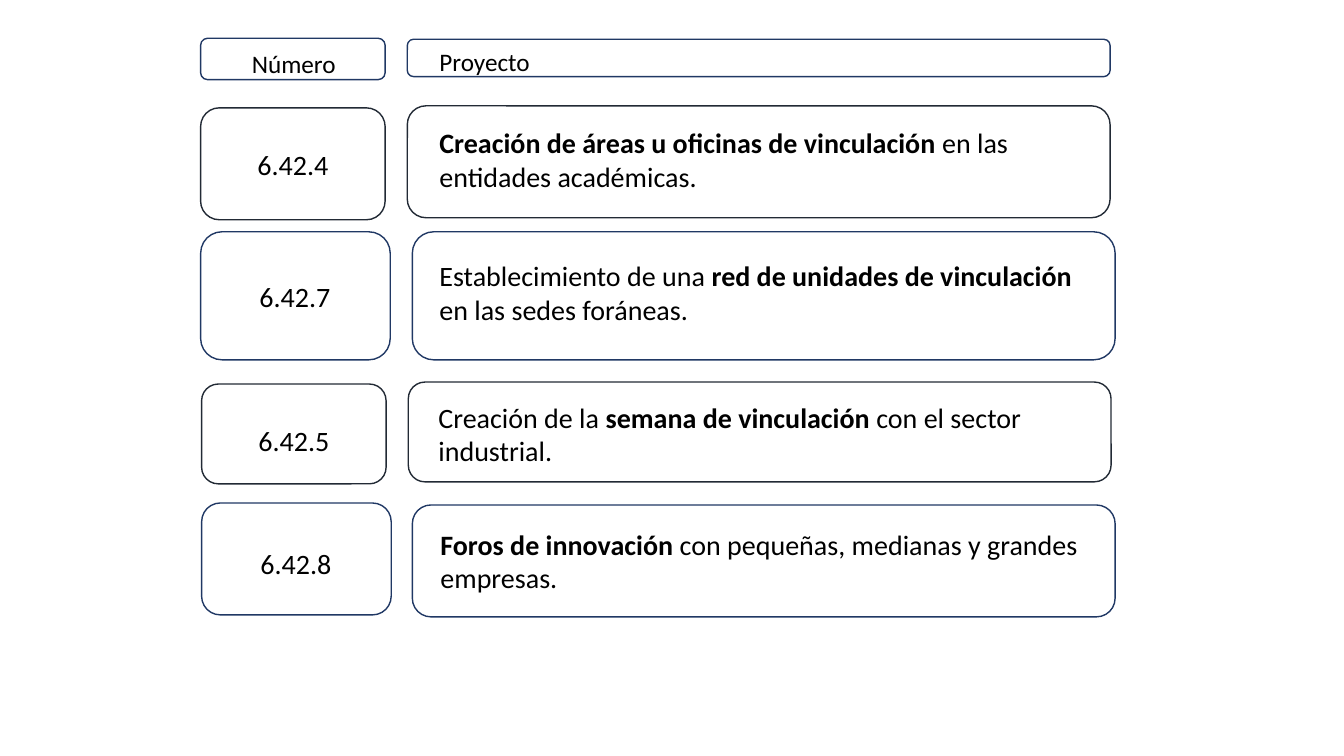
from pptx import Presentation
from pptx.dml.color import RGBColor
from pptx.enum.shapes import MSO_SHAPE
from pptx.enum.text import PP_ALIGN
from pptx.util import Inches, Pt

NAVY, SLATE, BLACK = "203864", "222A35", "000000"

presentation = Presentation()
presentation.slide_width = Inches(13.33)
presentation.slide_height = Inches(7.5)
slide = presentation.slides.add_slide(presentation.slide_layouts[6])


def add_frame(bounds, color):
    frame = slide.shapes.add_shape(MSO_SHAPE.ROUNDED_RECTANGLE, *map(Inches, bounds))
    frame.shadow.inherit = False
    frame.fill.background()
    frame.line.color.rgb = RGBColor.from_string(color)
    frame.line.width = Pt(1)


def add_label(bounds, runs, size, align=PP_ALIGN.LEFT, wrap=True):
    """Write (text, bold) runs as one paragraph."""
    label = slide.shapes.add_textbox(*map(Inches, bounds)).text_frame
    label.word_wrap = wrap
    paragraph = label.paragraphs[0]
    paragraph.alignment = align
    for text, bold in runs:
        run = paragraph.add_run()
        run.text = text
        format_values = {"name": "Calibri", "size": Pt(size), "bold": bold}
        for attribute, value in format_values.items():
            setattr(run.font, attribute, value)
        run.font.color.rgb = RGBColor.from_string(BLACK)


# Column headings: frame, label position, text
headings = [
    ((1.99, 0.38, 1.83, 0.41), (2.4, 0.43, 1.26, 0.4), "Número"),
    ((4.04, 0.39, 6.97, 0.37), (4.26, 0.41, 3.38, 0.34), "Proyecto"),
]
for frame_bounds, label_bounds, heading in headings:
    add_frame(frame_bounds, NAVY)
    add_label(label_bounds, [(heading, False)], 18)

# Projects: number, color, number frame, project frame, label corners, description
projects = [
    ("6.42.4", SLATE, (1.99, 1.07, 1.83, 1.11), (4.04, 1.05, 6.97, 1.11),
     (2.45, 1.41), (4.26, 1.2),
     [("Creación de áreas u oficinas de vinculación ", True),
      ("en las entidades académicas.", False)]),
    ("6.42.7", NAVY, (1.99, 2.3, 1.88, 1.27), (4.09, 2.3, 6.97, 1.27),
     (2.47, 2.72), (4.26, 2.52),
     [("Establecimiento de una ", False),
      ("red de unidades de vinculación ", True),
      ("en las sedes foráneas.", False)]),
    ("6.42.5", SLATE, (2, 3.81, 1.83, 0.99), (4.05, 3.79, 6.97, 0.99),
     (2.46, 4.15), (4.25, 3.92),
     [("Creación de la ", False),
      ("semana de vinculación ", True),
      ("con el sector industrial.", False)]),
    ("6.42.8", NAVY, (2, 4.99, 1.88, 1.11), (4.09, 5.01, 6.97, 1.11),
     (2.48, 5.37), (4.27, 5.18),
     [("Foros de innovación ", True),
      ("con pequeñas, medianas y grandes empresas.", False)]),
]
for (number, color, number_frame, project_frame,
     number_corner, description_corner, description) in projects:
    add_frame(number_frame, color)
    add_frame(project_frame, color)
    add_label((*number_corner, 0.91, 0.44), [(number, False)], 20,
              PP_ALIGN.CENTER, wrap=False)
    add_label((*description_corner, 6.67, 0.77), description, 20)

presentation.save("out.pptx")
